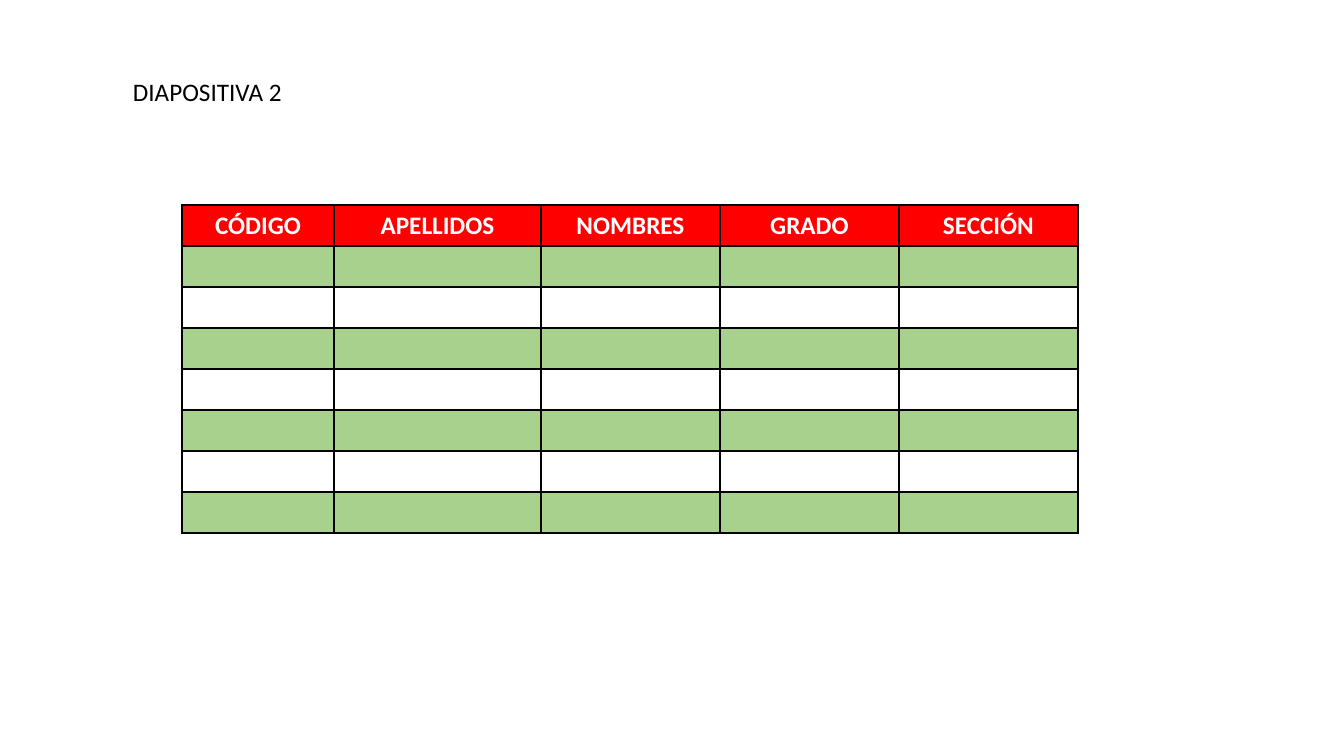
from lxml import etree
from pptx import Presentation
from pptx.dml.color import RGBColor
from pptx.enum.text import MSO_ANCHOR, MSO_AUTO_SIZE, PP_ALIGN
from pptx.oxml.ns import qn
from pptx.util import Pt

LEFT, CENTER = PP_ALIGN.LEFT, PP_ALIGN.CENTER
TOP = MSO_ANCHOR.TOP
GROW = MSO_AUTO_SIZE.SHAPE_TO_FIT_TEXT
SCALE = 914400 / 100.8

BLACK, WHITE, RED, GREEN = "000000", "FFFFFF", "FF0000", "A9D18E"
HEADS = ["CÓDIGO", "APELLIDOS", "NOMBRES", "GRADO", "SECCIÓN"]
WIDTHS = [152, 207, 179, 179, 179]
ROWS, ROW_H = 8, 41


def px(n):
    return round(n * SCALE)


def color(code):
    return RGBColor.from_string(code)


class Deck:
    font = "Calibri"
    size = 18

    def __init__(self, width, height):
        self.prs = Presentation()
        self.prs.slide_width = px(width)
        self.prs.slide_height = px(height)
        self.slide = self.prs.slides.add_slide(self.prs.slide_layouts[6])

    def style(self, frame, text, ink, align=LEFT, bold=False):
        frame.text = text
        para = frame.paragraphs[0]
        para.alignment = align
        for run in para.runs:
            run.font.name = self.font
            run.font.size = Pt(self.size)
            run.font.bold = bold
            run.font.color.rgb = color(ink)

    def label(self, x, y, w, h, text, ink):
        box = self.slide.shapes.add_textbox(px(x), px(y), px(w), px(h))
        frame = box.text_frame
        frame.word_wrap = True
        frame.auto_size = GROW
        self.style(frame, text, ink)

    def border(self, cell, ink):
        props = cell._tc.get_or_add_tcPr()
        for side in ("lnL", "lnR", "lnT", "lnB"):
            line = etree.SubElement(props, qn("a:" + side), w=str(Pt(1)))
            fill = etree.SubElement(line, qn("a:solidFill"))
            etree.SubElement(fill, qn("a:srgbClr"), val=ink)

    def paint(self, cell, fill):
        if fill:
            cell.fill.solid()
            cell.fill.fore_color.rgb = color(fill)
        else:
            cell.fill.background()

    def table(self, x, y, widths, heads, rows, row_h, fills):
        frame = self.slide.shapes.add_table(
            rows, len(widths), px(x), px(y), px(sum(widths)), px(rows * row_h))
        table = frame.table
        for col, width in zip(table.columns, widths):
            col.width = px(width)
        for i, row in enumerate(table.rows):
            row.height = px(row_h)
            for j, cell in enumerate(row.cells):
                cell.vertical_anchor = TOP
                self.border(cell, BLACK)
                self.paint(cell, fills[i])
                if i == 0:
                    self.style(cell.text_frame, heads[j], WHITE, CENTER, True)

    def save(self):
        self.prs.save("out.pptx")


def main():
    deck = Deck(1344, 756)

    # Student table: red header, then green and clear rows in turn
    fills = [RED] + [GREEN if i % 2 else None for i in range(1, ROWS)]
    deck.table(182, 205, WIDTHS, HEADS, ROWS, ROW_H, fills)

    # Slide label
    deck.label(123, 71, 208, 40, "DIAPOSITIVA 2", BLACK)

    deck.save()


if __name__ == "__main__":
    main()
